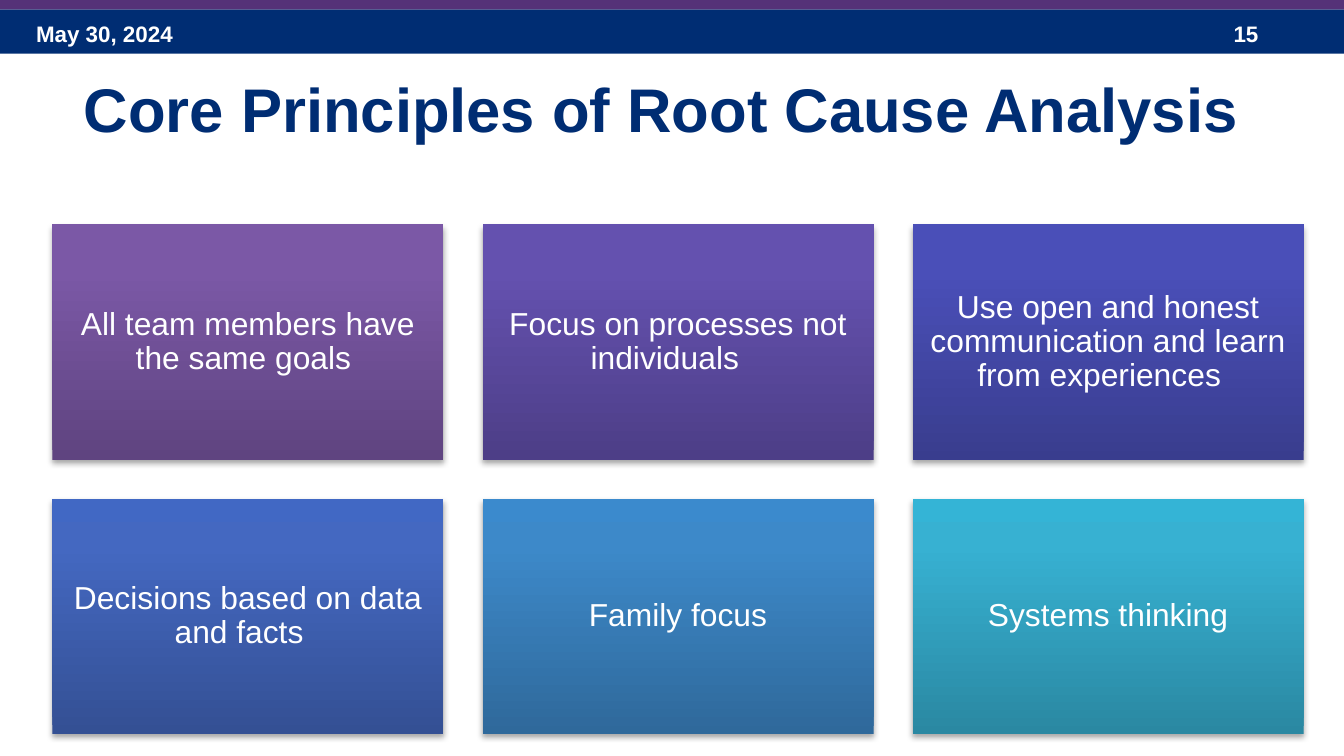
from lxml.etree import SubElement
from pptx import Presentation
from pptx.dml.color import RGBColor
from pptx.enum.shapes import MSO_SHAPE
from pptx.enum.text import MSO_ANCHOR, PP_ALIGN
from pptx.oxml.ns import qn
from pptx.util import Inches, Pt

COLORS = {
    "navy": "002D73",
    "purple": "553278",
    "white": "FFFFFF",
    "shadow": "000000",
}

# Text, then gradient colours from bottom to top
PRINCIPLES = [
    ("All team members have the same goals ", ("5F4480", "7B58A6", "7C57A8")),
    ("Focus on processes not individuals   ", ("4D3E87", "6451AF", "6450B2")),
    ("Use open and honest communication and learn from experiences  ",
     ("393D8E", "4A4FB8", "484EBB")),
    ("Decisions based on data and facts  ", ("345094", "4468C1", "4168C4")),
    ("Family focus", ("2F699B", "3D89C9", "3B8ACD")),
    ("Systems thinking", ("2A88A2", "37B1D2", "34B4D6")),
]
GRADIENT_POSITIONS = (0, 80, 100)
COLUMNS = 3
CARD_LEFT, CARD_TOP = 0.39, 1.67
CARD_WIDTH, CARD_HEIGHT = 2.91, 1.75
COLUMN_STEP, ROW_STEP = 3.2, 2.04


def add_rectangle(slide, left, top, width, height):
    shape = slide.shapes.add_shape(
        MSO_SHAPE.RECTANGLE, Inches(left), Inches(top), Inches(width), Inches(height))
    shape.shadow.inherit = False
    shape.line.fill.background()
    return shape


def add_band(slide, top, height, color):
    band = add_rectangle(slide, 0, top, 10, height)
    band.fill.solid()
    band.fill.fore_color.rgb = RGBColor.from_string(COLORS[color])


def write_text(shape, text, size, color, bold=False, alignment=PP_ALIGN.LEFT):
    shape.text_frame.word_wrap = True
    paragraph = shape.text_frame.paragraphs[0]
    paragraph.alignment = alignment
    run = paragraph.add_run()
    run.text = text
    run.font.name = "Arial"
    run.font.size = Pt(size)
    run.font.bold = bold
    run.font.color.rgb = RGBColor.from_string(COLORS[color])
    return paragraph


def add_label(slide, left, top, width, height, text, size, color, alignment=PP_ALIGN.LEFT):
    box = slide.shapes.add_textbox(
        Inches(left), Inches(top), Inches(width), Inches(height))
    write_text(box, text, size, color, bold=True, alignment=alignment)


def set_gradient(shape, colors):
    """Fill the shape with a three-stop gradient that runs upwards."""
    shape.fill.gradient()
    gradient = shape.fill._fill._gradFill
    stops = gradient.find(qn("a:gsLst"))
    for stop in list(stops):
        stops.remove(stop)
    for position, color in zip(GRADIENT_POSITIONS, colors):
        stop = SubElement(stops, qn("a:gs"), pos=str(position * 1000))
        SubElement(stop, qn("a:srgbClr"), val=color)
    gradient.find(qn("a:lin")).set("ang", str(270 * 60000))


def add_shadow(shape):
    effects = shape._element.spPr.find(qn("a:effectLst"))
    shadow = SubElement(
        effects, qn("a:outerShdw"), blurRad=str(Pt(3.1)), dist=str(Pt(1.8)),
        dir=str(90 * 60000), rotWithShape="0")
    color = SubElement(shadow, qn("a:srgbClr"), val=COLORS["shadow"])
    SubElement(color, qn("a:alpha"), val="35000")


def add_card(slide, left, top, text, colors):
    card = add_rectangle(slide, left, top, CARD_WIDTH, CARD_HEIGHT)
    set_gradient(card, colors)
    add_shadow(card)
    frame = card.text_frame
    frame.vertical_anchor = MSO_ANCHOR.MIDDLE
    frame.margin_left = frame.margin_right = Inches(0.07)
    frame.margin_top = frame.margin_bottom = Inches(0.07)
    paragraph = write_text(card, text, 17, "white", alignment=PP_ALIGN.CENTER)
    paragraph.line_spacing = 0.9


def main():
    presentation = Presentation()
    presentation.slide_width = Inches(10)
    presentation.slide_height = Inches(10) * 9 // 16
    slide = presentation.slides.add_slide(presentation.slide_layouts[6])

    add_band(slide, 0.07, 0.33, "navy")
    add_label(slide, 0.17, 0.1, 2.33, 0.3, "May 30, 2024", 12, "white")
    add_label(slide, 9.08, 0.1, 0.75, 0.3, "15", 12, "white")
    add_band(slide, -0.02, 0.09, "purple")
    add_label(slide, 0.17, 0.48, 9.5, 0.7, "Core Principles of Root Cause Analysis",
              33, "navy", PP_ALIGN.CENTER)

    for index, (text, colors) in enumerate(PRINCIPLES):
        row, column = divmod(index, COLUMNS)
        add_card(slide, CARD_LEFT + column * COLUMN_STEP,
                 CARD_TOP + row * ROW_STEP, text, colors)

    presentation.save("out.pptx")


if __name__ == "__main__":
    main()
